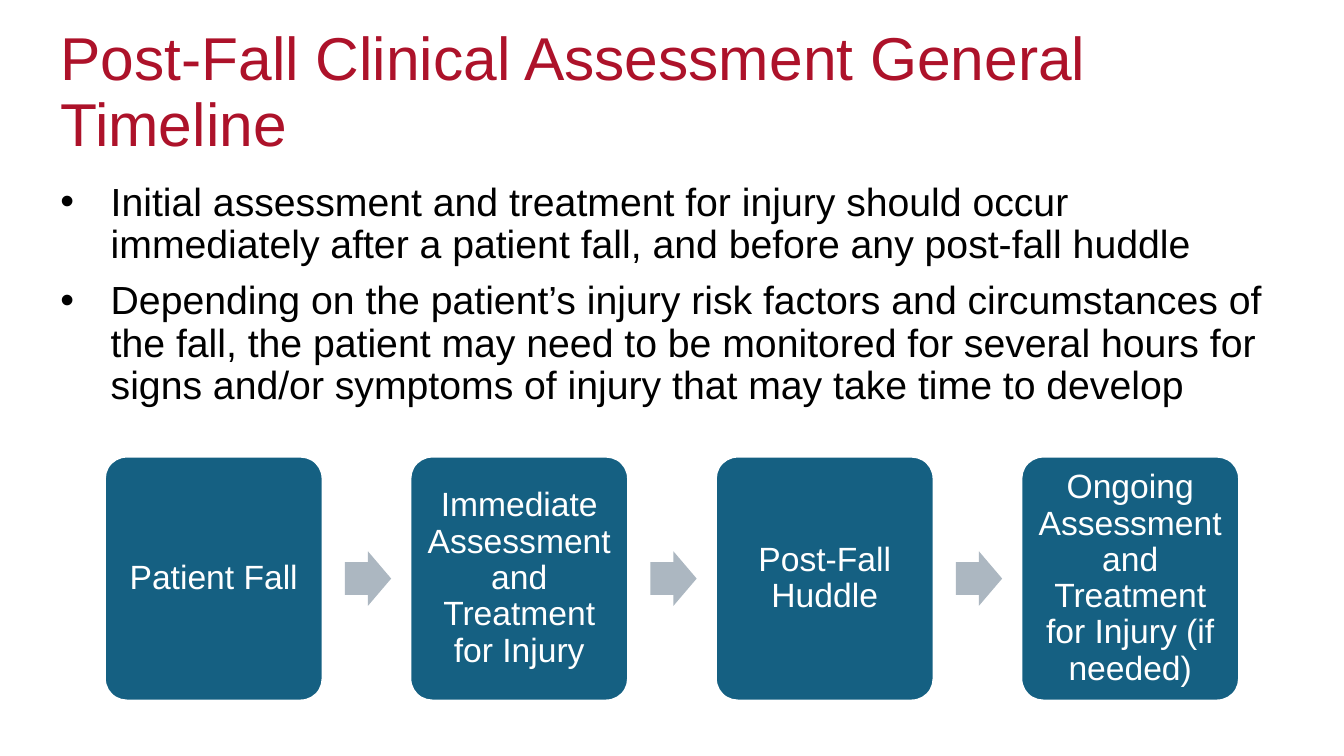
import pptx
import pptx.util
import pptx.dml.color
import pptx.enum.shapes
import pptx.enum.text
import pptx.oxml.ns
from lxml import etree

Inches, Pt = pptx.util.Inches, pptx.util.Pt
SHAPES = pptx.enum.shapes.MSO_SHAPE
ALIGN = pptx.enum.text.PP_ALIGN
ANCHOR = pptx.enum.text.MSO_ANCHOR

# Content
TITLE = "Post-Fall Clinical Assessment General Timeline"
GUIDANCE = [
    "Initial assessment and treatment for injury should occur immediately "
    "after a patient fall, and before any post-fall huddle",
    "Depending on the patient’s injury risk factors and circumstances of the fall, "
    "the patient may need to be monitored for several hours for signs and/or "
    "symptoms of injury that may take time to develop",
]
STEPS = [
    "Patient Fall",
    "Immediate Assessment and Treatment for Injury",
    "Post-Fall Huddle",
    "Ongoing Assessment and Treatment for Injury (if needed)",
]
COLORS = {"title": "AD122A", "body": "000000", "step": "156082",
          "arrow": "ACB7C1", "white": "FFFFFF"}

# Timeline geometry, in inches
STEP_LEFT, STEP_TOP, STEP_WIDTH, STEP_HEIGHT = 1.04, 4.53, 2.16, 2.42
STEP_PITCH = 3.03
ARROW_GAP, ARROW_WIDTH, ARROW_HEIGHT = 0.22, 0.46, 0.54
ARROW_TOP = STEP_TOP + (STEP_HEIGHT - ARROW_HEIGHT) / 2


def rgb(name):
    return pptx.dml.color.RGBColor.from_string(COLORS[name])


def format_paragraph(paragraph, size, color, align=ALIGN.LEFT):
    paragraph.alignment = align
    paragraph.line_spacing = 0.9
    for run in paragraph.runs:
        run.font.name = "Arial"
        run.font.size = Pt(size)
        run.font.color.rgb = rgb(color)


def add_bullet(paragraph):
    properties = paragraph._p.get_or_add_pPr()
    properties.set("marL", str(Inches(0.5)))
    properties.set("indent", str(Inches(-0.5)))
    for tag, attribute, value in (("a:buFont", "typeface", "Arial"),
                                  ("a:buChar", "char", "•")):
        etree.SubElement(properties, pptx.oxml.ns.qn(tag)).set(attribute, value)


def add_filled(slide, kind, box, color, adjustments):
    shape = slide.shapes.add_shape(kind, *map(Inches, box))
    shape.shadow.inherit = False
    shape.fill.solid()
    shape.fill.fore_color.rgb = rgb(color)
    for index, value in enumerate(adjustments):
        shape.adjustments[index] = value
    return shape


def add_step(slide, left, label):
    step = add_filled(slide, SHAPES.ROUNDED_RECTANGLE,
                      (left, STEP_TOP, STEP_WIDTH, STEP_HEIGHT), "step", [0.1])
    step.line.color.rgb = rgb("white")
    step.line.width = Pt(1.5)
    frame = step.text_frame
    frame.word_wrap = True
    frame.vertical_anchor = ANCHOR.MIDDLE
    frame.margin_left = frame.margin_right = Inches(0.1)
    frame.margin_top = frame.margin_bottom = Inches(0.1)
    frame.text = label
    format_paragraph(frame.paragraphs[0], 24, "white", ALIGN.CENTER)


def main():
    deck = pptx.Presentation()
    deck.slide_width, deck.slide_height = Inches(13.33), Inches(7.5)
    slide = deck.slides.add_slide(deck.slide_layouts[5])

    # Title
    title = slide.shapes.title
    title.left, title.top = Inches(0.5), Inches(0.26)
    title.width, title.height = Inches(12.34), Inches(1.34)
    frame = title.text_frame
    frame.text = TITLE
    frame.word_wrap = True
    frame.auto_size = pptx.enum.text.MSO_AUTO_SIZE.NONE
    frame.vertical_anchor = ANCHOR.MIDDLE
    frame.margin_top = frame.margin_bottom = 0
    format_paragraph(frame.paragraphs[0], 43.2, "title")

    # Guidance bullets
    guidance = slide.shapes.add_textbox(*map(Inches, (0.5, 1.76, 12.34, 5.42)))
    guidance.text_frame.word_wrap = True
    guidance.text_frame.text = "\n".join(GUIDANCE)
    for paragraph in guidance.text_frame.paragraphs:
        format_paragraph(paragraph, 28, "body")
        paragraph.space_before = Pt(10)
        add_bullet(paragraph)

    # Timeline steps, with an arrow before each one after the first
    for index, label in enumerate(STEPS):
        left = STEP_LEFT + index * STEP_PITCH
        if index:
            arrow_left = left - STEP_PITCH + STEP_WIDTH + ARROW_GAP
            arrow = add_filled(slide, SHAPES.RIGHT_ARROW,
                               (arrow_left, ARROW_TOP, ARROW_WIDTH, ARROW_HEIGHT),
                               "arrow", [0.6, 0.5])
            arrow.line.fill.background()
        add_step(slide, left, label)

    deck.save("out.pptx")


if __name__ == "__main__":
    main()
